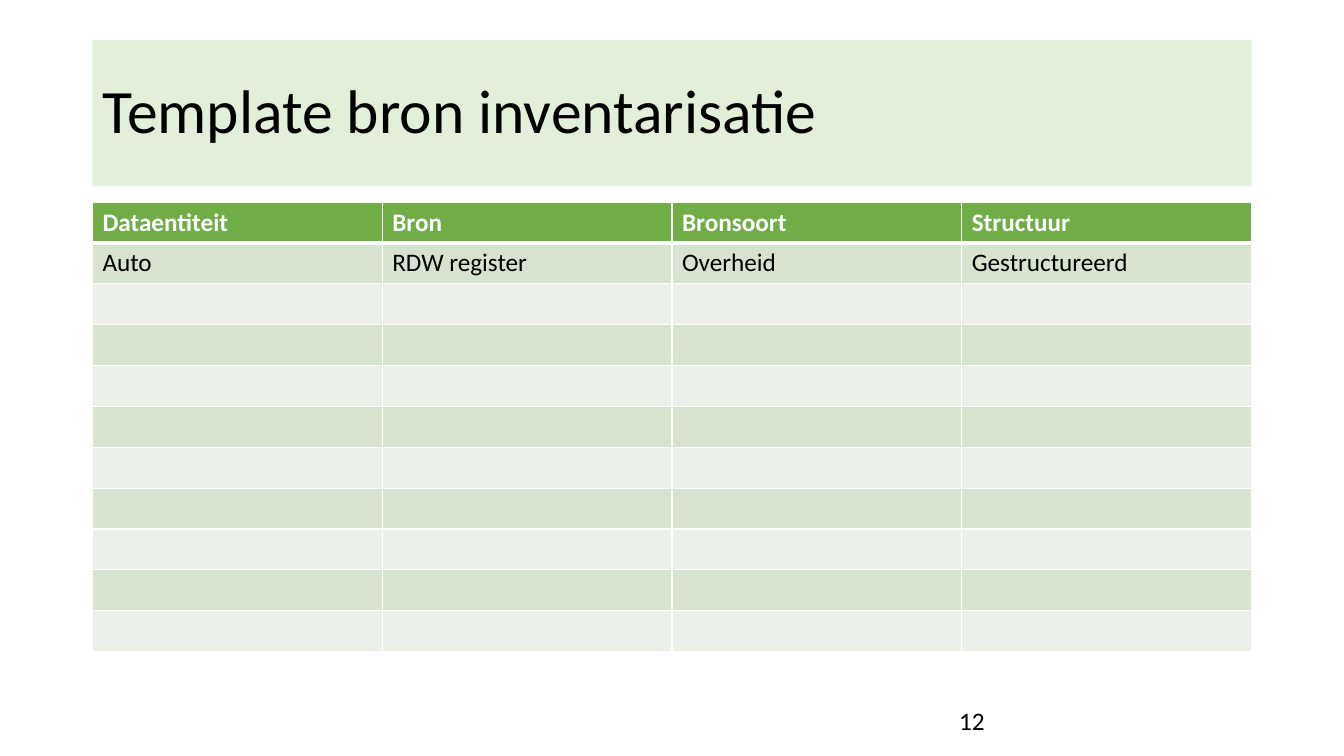
import dataclasses

import lxml.etree
import pptx
import pptx.dml.color
import pptx.enum.text
import pptx.oxml.ns
import pptx.util

Cm = pptx.util.Cm
Pt = pptx.util.Pt
RGB = pptx.dml.color.RGBColor.from_string


@dataclasses.dataclass(frozen=True)
class Theme:
    font: str = "Calibri"
    title_size: int = 44
    body_size: int = 18
    text: str = "000000"
    white: str = "FFFFFF"
    title_fill: str = "E2F0D9"
    header_fill: str = "70AD47"
    bands: tuple = ("D5E3CF", "EBF1E9")


theme = Theme()


def format_paragraph(paragraph, size, color, bold=False):
    paragraph.alignment = pptx.enum.text.PP_ALIGN.LEFT
    paragraph.font.name = theme.font
    paragraph.font.size = Pt(size)
    paragraph.font.bold = bold
    paragraph.font.color.rgb = RGB(color)


def add_border(cell, side, width):
    properties = cell._tc.get_or_add_tcPr()
    line = lxml.etree.SubElement(properties, pptx.oxml.ns.qn(f"a:ln{side}"), w=str(Pt(width)))
    fill = lxml.etree.SubElement(line, pptx.oxml.ns.qn("a:solidFill"))
    lxml.etree.SubElement(fill, pptx.oxml.ns.qn("a:srgbClr"), val=theme.white)


presentation = pptx.Presentation()
presentation.slide_width = Cm(33.87)
presentation.slide_height = Cm(19.05)
slide = presentation.slides.add_slide(presentation.slide_layouts[5])

left, width = Cm(2.33), Cm(29.21)

title = slide.shapes.title
title.left, title.top, title.width, title.height = left, Cm(1.01), width, Cm(3.68)
title.fill.solid()
title.fill.fore_color.rgb = RGB(theme.title_fill)
title.text_frame.text = "Template bron inventarisatie"
title.text_frame.vertical_anchor = pptx.enum.text.MSO_ANCHOR.MIDDLE
title_paragraph = title.text_frame.paragraphs[0]
title_paragraph.line_spacing = 0.9
format_paragraph(title_paragraph, theme.title_size, theme.text)

filled_rows = [
    ["Dataentiteit", "Bron", "Bronsoort", "Structuur"],
    ["Auto", "RDW register", "Overheid", "Gestructureerd"],
]
row_count, column_count = 11, len(filled_rows[0])
row_height = Cm(1.03)
table = slide.shapes.add_table(
    row_count, column_count, left, Cm(5.09), width, row_height * row_count
).table

for row_index, row in enumerate(table.rows):
    row.height = row_height
    is_header = row_index == 0
    for column_index, cell in enumerate(row.cells):
        for side in "LRTB":
            below_header = (side == "B" and is_header) or (side == "T" and row_index == 1)
            add_border(cell, side, 3 if below_header else 1)
        cell.fill.solid()
        cell.fill.fore_color.rgb = RGB(
            theme.header_fill if is_header else theme.bands[(row_index - 1) % 2]
        )
        if row_index < len(filled_rows):
            cell.text = filled_rows[row_index][column_index]
        format_paragraph(
            cell.text_frame.paragraphs[0],
            theme.body_size,
            theme.white if is_header else theme.text,
            is_header,
        )

page_number = slide.shapes.add_textbox(Cm(23.92), Cm(17.66), Cm(7.62), Cm(1.01))
page_number.text_frame.word_wrap = True
page_number.text_frame.vertical_anchor = pptx.enum.text.MSO_ANCHOR.MIDDLE
page_number.text_frame.text = "12"
format_paragraph(page_number.text_frame.paragraphs[0], theme.body_size, theme.text)

presentation.save("out.pptx")
